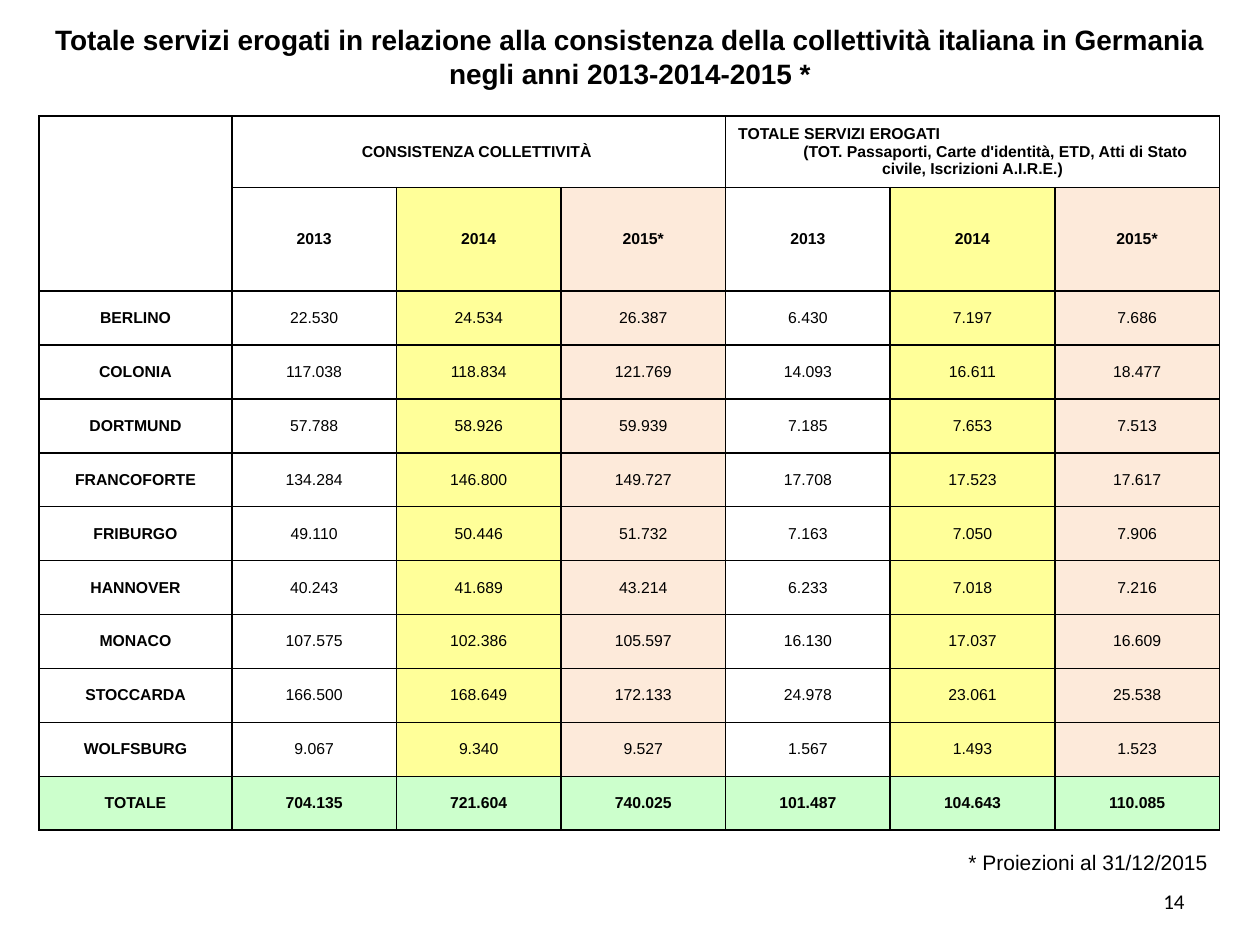
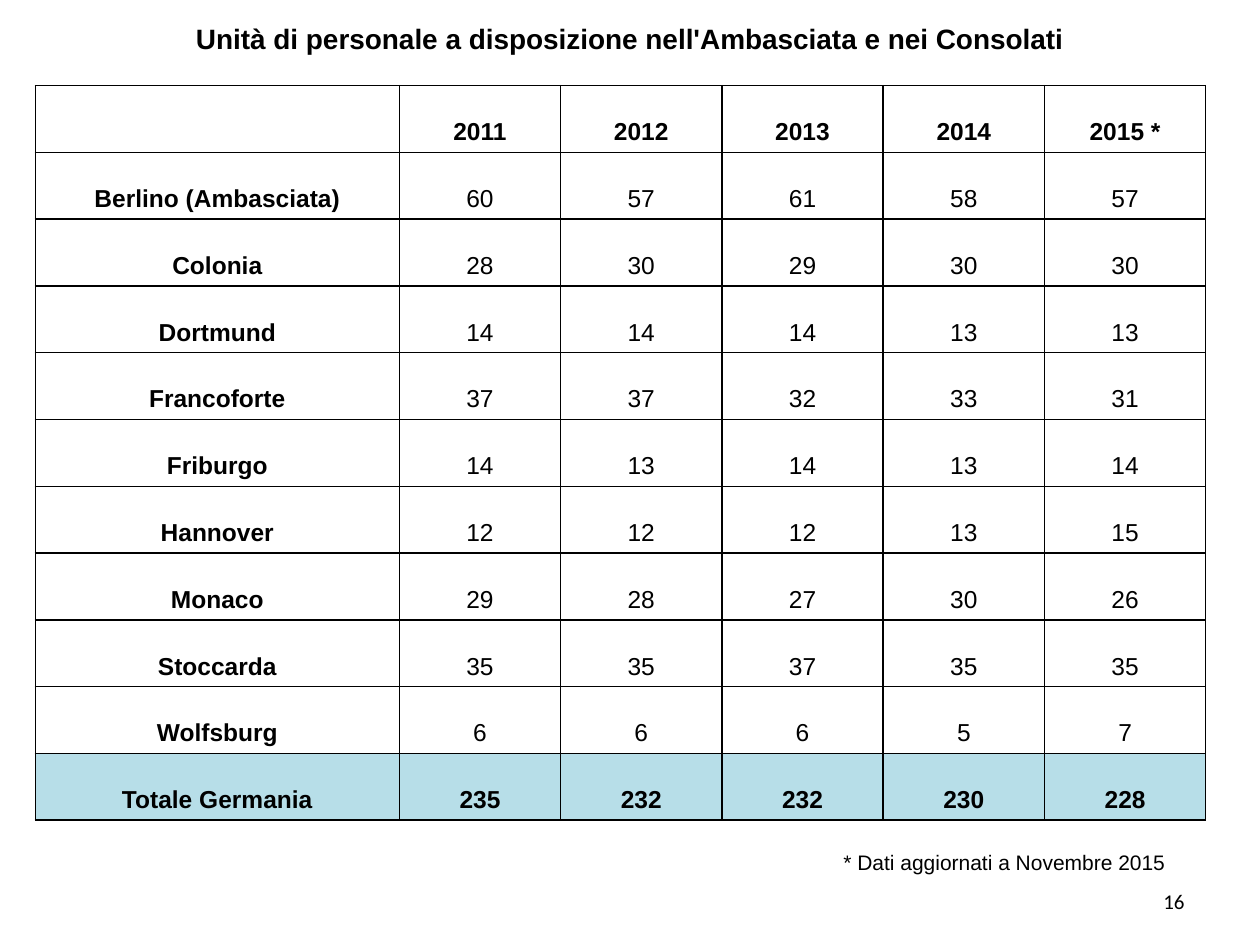
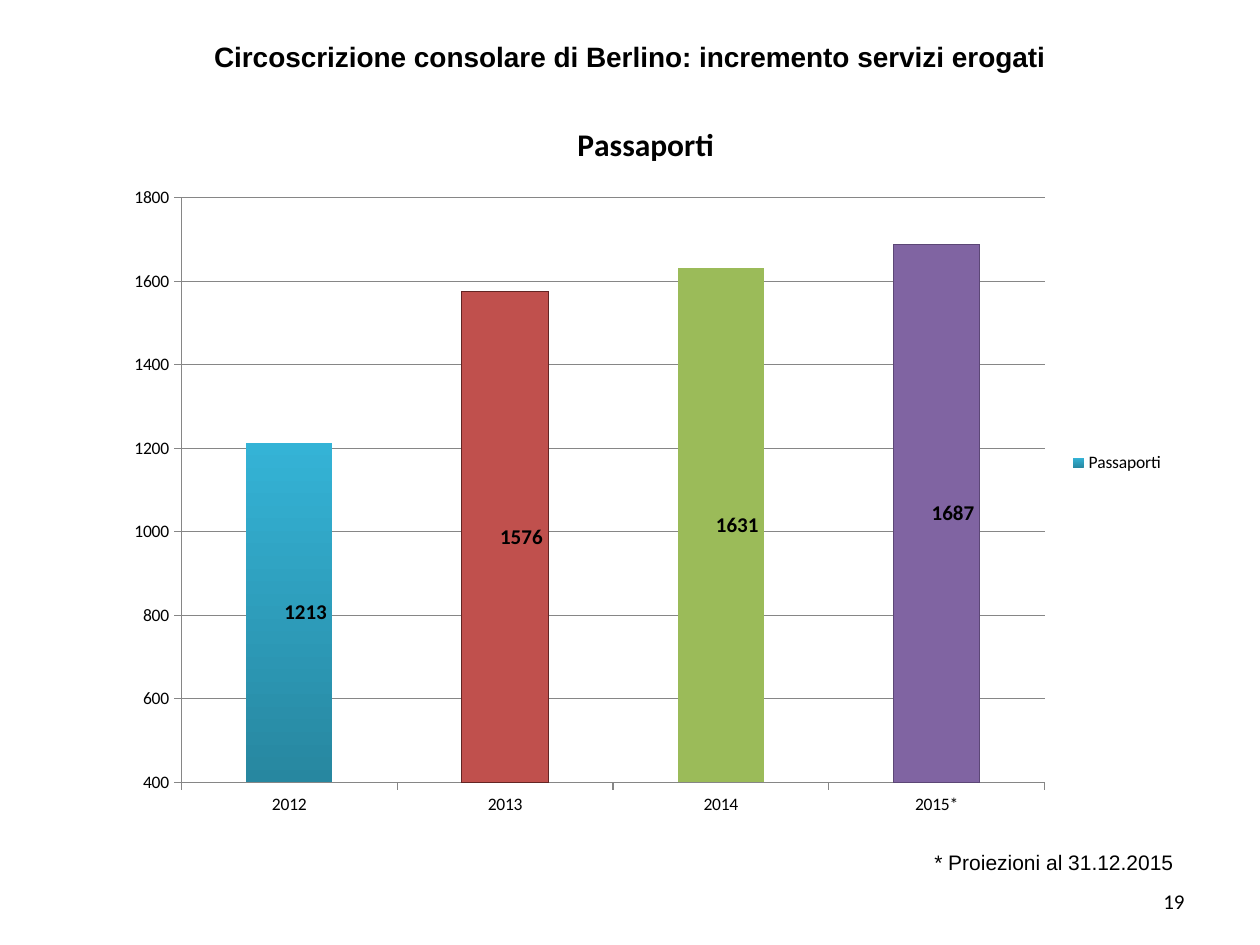
from dataclasses import dataclass
from typing import Optional

import pptx
import pptx.chart.data
import pptx.dml.color
import pptx.enum.chart
import pptx.enum.text
import pptx.oxml
import pptx.oxml.ns
import pptx.util
from pptx.util import Inches

ALIGN = pptx.enum.text.PP_ALIGN
ANCHOR = pptx.enum.text.MSO_ANCHOR
TITLE_ONLY = 5
COLORS = {
    "ink": "000000", "paper": "FFFFFF", "yellow": "FFFF99", "peach": "FDEADA",
    "green": "CCFFCC", "sky": "B7DEE8", "rule": "868686",
    "teal_dark": "2787A0", "teal": "34B3D6", "red": "C0504D", "red_dark": "632523",
    "lime": "9BBB59", "purple": "8064A2", "purple_dark": "5C4776",
}


@dataclass(frozen=True)
class Box:
    left: float
    top: float
    width: float
    height: float

    def emu(self) -> tuple:
        return tuple(Inches(v) for v in (self.left, self.top, self.width, self.height))


@dataclass(frozen=True)
class Page:
    title: str
    title_box: Box
    note: str
    note_box: Box
    number: int
    note_align: ALIGN = ALIGN.CENTER


@dataclass(frozen=True)
class Grid:
    box: Box
    first_column: float
    header_rows: tuple
    rows: list
    size: int
    anchor: ANCHOR
    total_fill: str
    column_fills: tuple


@dataclass(frozen=True)
class Bar:
    year: str
    passports: int
    fill: Optional[str] = None
    outline: Optional[str] = None


NUMBER_BOX = Box(7.17, 6.95, 2.33, 0.4)

SERVICES_PAGE = Page(
    "Totale servizi erogati in relazione alla consistenza della collettività italiana "
    "in Germania negli anni 2013-2014-2015 *",
    Box(0.12, 0.13, 9.76, 0.64), "* Proiezioni al 31/12/2015 ",
    Box(5.63, 6.69, 4.1, 0.3), 14, ALIGN.RIGHT)
STAFF_PAGE = Page(
    "Unità di personale a disposizione nell'Ambasciata e nei Consolati",
    Box(0.12, 0.12, 9.76, 0.37), "* Dati aggiornati a Novembre 2015 ",
    Box(6.57, 6.69, 2.85, 0.3), 16)
PASSPORTS_PAGE = Page(
    "Circoscrizione consolare di Berlino: incremento servizi erogati",
    Box(0.12, 0.26, 9.76, 0.37), "* Proiezioni al 31.12.2015",
    Box(7.3, 6.69, 2.13, 0.3), 19)

SERVICES = Grid(
    Box(0.31, 0.92, 9.37, 5.67), 1.53, (0.57, 0.82),
    [
        ["", "CONSISTENZA COLLETTIVITÀ ", "", "",
         "TOTALE SERVIZI EROGATI\n(TOT. Passaporti, Carte d'identità, ETD, "
         "Atti di Stato civile, Iscrizioni A.I.R.E.)", "", ""],
        ["", "2013", "2014", "2015*", "2013", "2014", "2015*"],
        ["BERLINO", "22.530", "24.534", "26.387", "6.430", "7.197", "7.686"],
        ["COLONIA", "117.038", "118.834", "121.769", "14.093", "16.611", "18.477"],
        ["DORTMUND", "57.788", "58.926", "59.939", "7.185", "7.653", "7.513"],
        ["FRANCOFORTE", "134.284", "146.800", "149.727", "17.708", "17.523", "17.617"],
        ["FRIBURGO", "49.110", "50.446", "51.732", "7.163", "7.050", "7.906"],
        ["HANNOVER", "40.243", "41.689", "43.214", "6.233", "7.018", "7.216"],
        ["MONACO", "107.575", "102.386", "105.597", "16.130", "17.037", "16.609"],
        ["STOCCARDA", "166.500", "168.649", "172.133", "24.978", "23.061", "25.538"],
        ["WOLFSBURG", "9.067", "9.340", "9.527", "1.567", "1.493", "1.523"],
        ["TOTALE", "704.135", "721.604", "740.025", "101.487", "104.643", "110.085"],
    ],
    9, ANCHOR.MIDDLE, "green",
    ("paper",) + ("paper", "yellow", "peach") * 2)

STAFF = Grid(
    Box(0.28, 0.68, 9.29, 5.83), 2.89, (0.53,),
    [
        ["", "2011", "2012", "2013", "2014", "2015 *"],
        ["Berlino (Ambasciata)", "60", "57", "61", "58", "57"],
        ["Colonia", "28", "30", "29", "30", "30"],
        ["Dortmund", "14", "14", "14", "13", "13"],
        ["Francoforte", "37", "37", "32", "33", "31"],
        ["Friburgo", "14", "13", "14", "13", "14"],
        ["Hannover", "12", "12", "12", "13", "15"],
        ["Monaco", "29", "28", "27", "30", "26"],
        ["Stoccarda", "35", "35", "37", "35", "35"],
        ["Wolfsburg", "6", "6", "6", "5", "7"],
        ["Totale Germania", "235", "232", "232", "230", "228"],
    ],
    14, ANCHOR.BOTTOM, "sky", ("paper",) * 6)

CHART_BOX = Box(0.91, 0.76, 8.43, 5.83)
PLOT_BOX = Box(0.53, 0.81, 6.85, 4.64)
LABEL_SHIFT = 0.13
BARS = [
    Bar("2012", 1213),
    Bar("2013", 1576, "red", "red_dark"),
    Bar("2014", 1631, "lime"),
    Bar("2015*", 1687, "purple", "purple_dark"),
]


def rgb(color: str) -> pptx.dml.color.RGBColor:
    return pptx.dml.color.RGBColor.from_string(COLORS[color])


def style_font(font, size: float, bold: bool = False, name: str = "Calibri") -> None:
    font.name = name
    font.size = pptx.util.Pt(size)
    font.bold = bold
    font.color.rgb = rgb("ink")


def write(frame, text: str, *, size: float, bold: bool = False, name: str = "Arial",
          align: ALIGN = ALIGN.CENTER) -> None:
    frame.word_wrap = True
    frame.text = text
    for paragraph in frame.paragraphs:
        paragraph.alignment = align
        paragraph.space_before = pptx.util.Pt(0)
        style_font(paragraph.font, size, bold, name)
        for run in paragraph.runs:
            style_font(run.font, size, bold, name)


def add_text(slide, box: Box, text: str, anchor: ANCHOR = ANCHOR.TOP, **style) -> None:
    frame = slide.shapes.add_textbox(*box.emu()).text_frame
    frame.vertical_anchor = anchor
    write(frame, text, **style)


def add_page(deck, page: Page):
    slide = deck.slides.add_slide(deck.slide_layouts[TITLE_ONLY])
    title = slide.shapes.title
    title.left, title.top, title.width, title.height = page.title_box.emu()
    title.text_frame.vertical_anchor = ANCHOR.TOP
    title.text_frame.auto_size = pptx.enum.text.MSO_AUTO_SIZE.NONE
    write(title.text_frame, page.title, size=16, bold=True)
    add_text(slide, page.note_box, page.note, size=12, align=page.note_align)
    add_text(slide, NUMBER_BOX, str(page.number), ANCHOR.MIDDLE,
             size=12, name="Calibri", align=ALIGN.RIGHT)
    return slide


def add_borders(cell) -> None:
    properties = cell._tc.get_or_add_tcPr()
    for index, side in enumerate(("lnL", "lnR", "lnT", "lnB")):
        properties.insert(index, pptx.oxml.parse_xml(
            f'<a:{side} {pptx.oxml.ns.nsdecls("a")} w="12700"><a:solidFill>'
            f'<a:srgbClr val="{COLORS["ink"]}"/></a:solidFill></a:{side}>'))


def add_grid(slide, grid: Grid):
    row_count, column_count = len(grid.rows), len(grid.rows[0])
    header_count = len(grid.header_rows)
    table = slide.shapes.add_table(row_count, column_count, *grid.box.emu()).table
    table.first_row = table.horz_banding = False
    value_width = (grid.box.width - grid.first_column) / (column_count - 1)
    body_height = (grid.box.height - sum(grid.header_rows)) / (row_count - header_count)
    for c, column in enumerate(table.columns):
        column.width = Inches(value_width if c else grid.first_column)
    for r, row in enumerate(table.rows):
        row.height = Inches(grid.header_rows[r] if r < header_count else body_height)
        is_total = r == row_count - 1
        is_heading = r < header_count
        is_group_heading = r < header_count - 1
        for c, cell in enumerate(row.cells):
            fill = "paper" if is_group_heading else grid.column_fills[c]
            add_borders(cell)
            cell.fill.solid()
            cell.fill.fore_color.rgb = rgb(grid.total_fill if is_total else fill)
            cell.vertical_anchor = grid.anchor
            write(cell.text_frame, grid.rows[r][c], size=grid.size,
                  bold=is_heading or is_total or c == 0)
    return table


def merge_service_headings(table) -> None:
    table.cell(0, 0).merge(table.cell(1, 0))
    for first in (1, 4):
        table.cell(0, first).merge(table.cell(0, first + 2))
    heading, detail = table.cell(0, 4).text_frame.paragraphs
    heading.alignment = ALIGN.LEFT
    detail._p.get_or_add_pPr().set("indent", str(Inches(0.36)))


def layout_xml(inner: bool, **values: float):
    target = '<c:layoutTarget val="inner"/>' if inner else ""
    modes = '<c:xMode val="edge"/><c:yMode val="edge"/>' if inner else ""
    places = "".join(f'<c:{key} val="{value:.4f}"/>' for key, value in values.items())
    return pptx.oxml.parse_xml(
        f'<c:layout {pptx.oxml.ns.nsdecls("c")}><c:manualLayout>{target}{modes}{places}'
        "</c:manualLayout></c:layout>")


def style_axis(axis) -> None:
    axis.major_tick_mark = pptx.enum.chart.XL_TICK_MARK.OUTSIDE
    style_font(axis.tick_labels.font, 10)
    axis.format.line.color.rgb = rgb("rule")


def style_bars(chart) -> None:
    series = chart.plots[0].series[0]
    gradient = series.format.fill
    gradient.gradient()
    gradient.gradient_angle = 90
    for stop, color in zip(gradient.gradient_stops, ("teal_dark", "teal")):
        stop.color.rgb = rgb(color)
    for index, bar in enumerate(BARS):
        point = series.points[index]
        if bar.fill:
            point.format.fill.solid()
            point.format.fill.fore_color.rgb = rgb(bar.fill)
        if bar.outline:
            point.format.line.color.rgb = rgb(bar.outline)
        style_font(point.data_label.font, 12, True)
    for label in chart.element.xpath("//c:dLbl"):
        label.insert(1, layout_xml(False, x=LABEL_SHIFT / CHART_BOX.width, y=0))


def add_passport_chart(slide) -> None:
    data = pptx.chart.data.CategoryChartData()
    data.categories = [bar.year for bar in BARS]
    data.add_series("Passaporti", [bar.passports for bar in BARS])
    chart = slide.shapes.add_chart(
        pptx.enum.chart.XL_CHART_TYPE.COLUMN_STACKED, *CHART_BOX.emu(), data).chart
    style_font(chart.font, 10)
    chart.has_title = True
    write(chart.chart_title.text_frame, "Passaporti", size=18, bold=True, name="Calibri")
    chart.chart_title.include_in_layout = False
    chart.has_legend = True
    chart.legend.position = pptx.enum.chart.XL_LEGEND_POSITION.RIGHT
    chart.legend.include_in_layout = False
    style_font(chart.legend.font, 10)

    plot = chart.plots[0]
    plot.vary_by_categories = False
    plot.gap_width = 150
    plot.overlap = 100
    style_axis(chart.category_axis)
    style_axis(chart.value_axis)
    chart.value_axis.minimum_scale = 400
    chart.value_axis.maximum_scale = 1800
    chart.value_axis.major_unit = 200
    chart.value_axis.major_gridlines.format.line.color.rgb = rgb("rule")
    style_bars(chart)

    area = chart.element.xpath("//c:plotArea")[0]
    for automatic in area.xpath("./c:layout"):
        area.remove(automatic)
    area.insert(0, layout_xml(
        True, x=PLOT_BOX.left / CHART_BOX.width, y=PLOT_BOX.top / CHART_BOX.height,
        w=PLOT_BOX.width / CHART_BOX.width, h=PLOT_BOX.height / CHART_BOX.height))


def main() -> None:
    deck = pptx.Presentation()
    deck.slide_width, deck.slide_height = Inches(10), Inches(7.5)
    merge_service_headings(add_grid(add_page(deck, SERVICES_PAGE), SERVICES))
    add_grid(add_page(deck, STAFF_PAGE), STAFF)
    add_passport_chart(add_page(deck, PASSPORTS_PAGE))
    deck.save("out.pptx")


if __name__ == "__main__":
    main()
